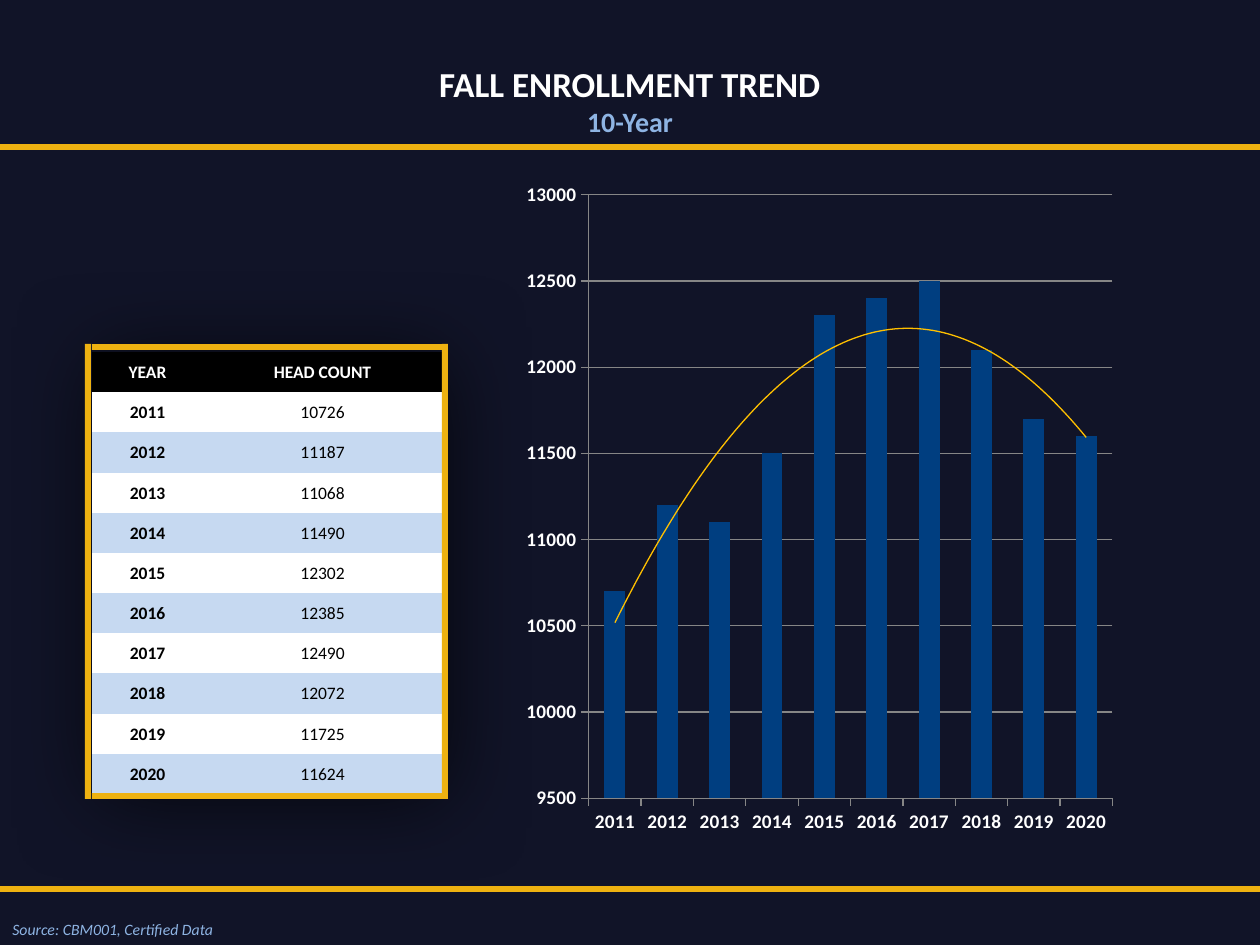
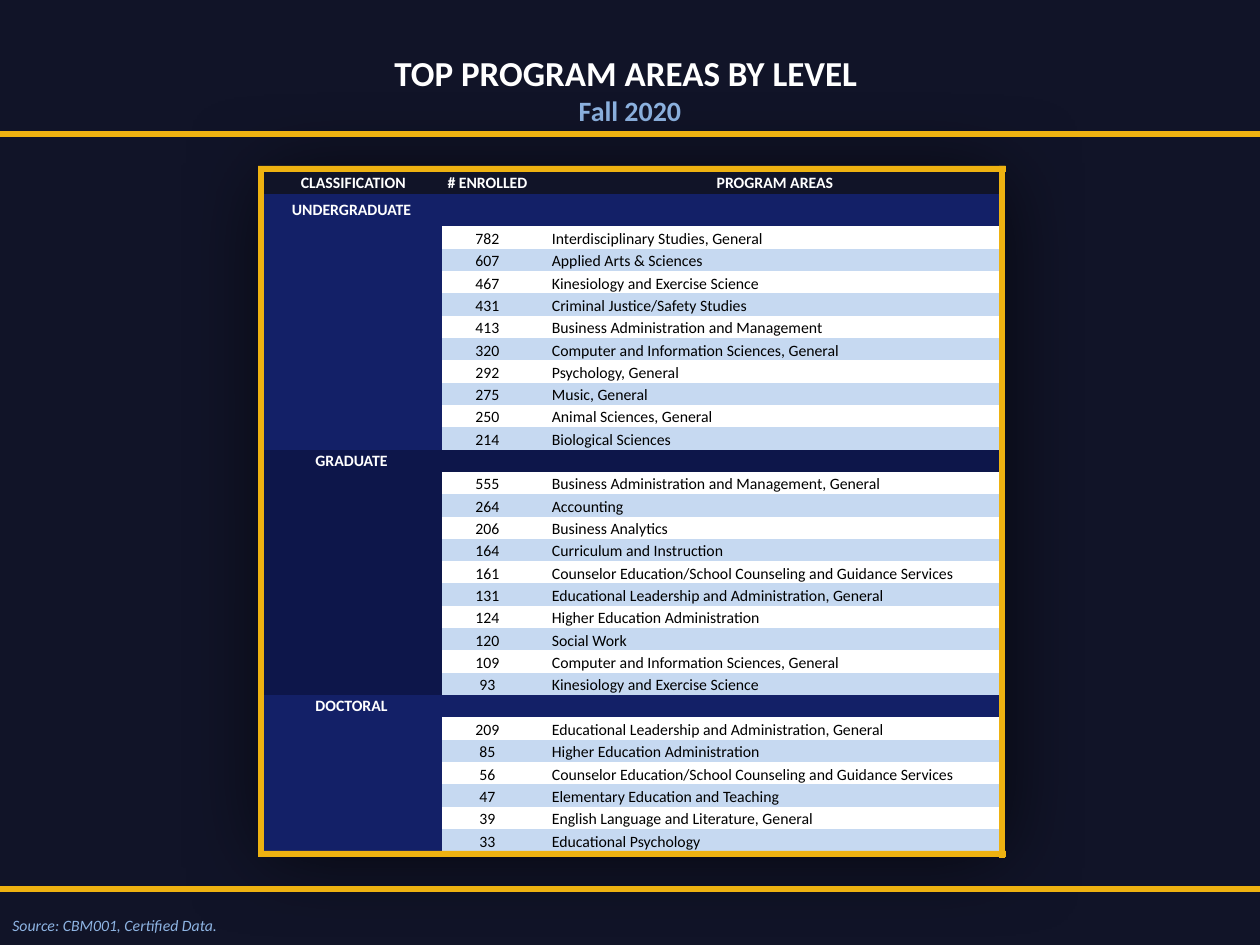
from pptx import Presentation
from pptx import util as u
from pptx.chart.data import CategoryChartData
from pptx.dml.color import RGBColor
from pptx.enum import chart as ch, shapes, text
from pptx.oxml import parse_xml

NAVY = RGBColor(0x11, 0x14, 0x28)
GOLD = RGBColor(0xEE, 0xB2, 0x11)
SKY = RGBColor(0x8E, 0xB4, 0xE3)
PALE = RGBColor(0xC6, 0xD9, 0xF1)
WHITE = RGBColor(0xFF, 0xFF, 0xFF)
BLACK = RGBColor(0, 0, 0)
ROYAL = RGBColor(0x13, 0x20, 0x67)
MIDNIGHT = RGBColor(0x0D, 0x16, 0x4A)
COLUMN_BLUE = RGBColor(0x00, 0x3E, 0x80)
AXIS_GRAY = RGBColor(0x86, 0x86, 0x86)
FONT = "Calibri"
NO_GRID_STYLE = "{2D5ABB26-0587-4C30-8999-92F81FD0307C}"
A_NS = 'xmlns:a="http://schemas.openxmlformats.org/drawingml/2006/main"'
C_NS = 'xmlns:c="http://schemas.openxmlformats.org/drawingml/2006/chart"'
CENTER, LEFT = text.PP_ALIGN.CENTER, text.PP_ALIGN.LEFT
MIDDLE, BOTTOM = text.MSO_ANCHOR.MIDDLE, text.MSO_ANCHOR.BOTTOM
BAR = 6


def px(n):
    return u.Emu(round(n * 914400 / 126))


def set_font(font, size, color, bold=False, italic=False):
    font.color.rgb = color
    look = {"name": FONT, "size": u.Pt(size), "bold": bold, "italic": italic}
    for key, value in look.items():
        setattr(font, key, value)


head_counts = {
    "2011": 10726, "2012": 11187, "2013": 11068, "2014": 11490, "2015": 12302,
    "2016": 12385, "2017": 12490, "2018": 12072, "2019": 11725, "2020": 11624,
}
levels = [
    ("UNDERGRADUATE", ROYAL, [
        (782, "Interdisciplinary Studies, General"),
        (607, "Applied Arts & Sciences"),
        (467, "Kinesiology and Exercise Science"),
        (431, "Criminal Justice/Safety Studies"),
        (413, "Business Administration and Management"),
        (320, "Computer and Information Sciences, General"),
        (292, "Psychology, General"),
        (275, "Music, General"),
        (250, "Animal Sciences, General"),
        (214, "Biological Sciences"),
    ]),
    ("GRADUATE", MIDNIGHT, [
        (555, "Business Administration and Management, General"),
        (264, "Accounting"),
        (206, "Business Analytics"),
        (164, "Curriculum and Instruction"),
        (161, "Counselor Education/School Counseling and Guidance Services"),
        (131, "Educational Leadership and Administration, General"),
        (124, "Higher Education Administration"),
        (120, "Social Work"),
        (109, "Computer and Information Sciences, General"),
        (93, "Kinesiology and Exercise Science"),
    ]),
    ("DOCTORAL", ROYAL, [
        (209, "Educational Leadership and Administration, General"),
        (85, "Higher Education Administration"),
        (56, "Counselor Education/School Counseling and Guidance Services"),
        (47, "Elementary Education and Teaching"),
        (39, "English Language and Literature, General"),
        (33, "Educational Psychology"),
    ]),
]

year_rows = [[(words, BLACK, WHITE, True, CENTER, MIDDLE, 5) for words in ("YEAR", "HEAD COUNT")]]
for i, (year, count) in enumerate(head_counts.items()):
    band = (WHITE, PALE)[i % 2]
    year_rows.append([(year, band, BLACK, True, CENTER, MIDDLE, 1),
                      (str(count), band, BLACK, False, CENTER, MIDDLE, 1)])

program_rows = [[(words, NAVY, WHITE, True, CENTER, MIDDLE, 0)
                 for words in (" CLASSIFICATION", "# ENROLLED", "", "PROGRAM AREAS")]]
for level, shade, programs in levels:
    program_rows.append([(words, shade, WHITE, True, CENTER, MIDDLE, 0)
                         for words in (level, "", "", "")])
    for i, (enrolled, program) in enumerate(programs):
        band = (WHITE, PALE)[i % 2]
        program_rows.append([("", shade, WHITE, True, CENTER, MIDDLE, 0),
                             (str(enrolled), band, BLACK, False, CENTER, BOTTOM, 1),
                             ("", band, BLACK, False, LEFT, BOTTOM, 1),
                             (program, band, BLACK, False, LEFT, BOTTOM, 1)])

pages = [
    {"title": "FALL ENROLLMENT TREND\n10-Year", "title_top": 56,
     "source": "Source: CBM001, Certified Data", "source_top": 914, "rule_top": 144,
     "rows": year_rows, "size": 10, "at": (92, 352), "widths": (111, 239),
     "heights": [442 / 11] * 11,
     "frame": [(92, 344, 351, BAR), (92, 793, 351, BAR),
               (85, 344, BAR, 455), (442, 344, BAR, 455)]},
    {"title": "TOP PROGRAM AREAS BY LEVEL \vFall 2020", "title_top": 45,
     "source": "Source: CBM001, Certified Data.", "source_top": 910, "rule_top": 131,
     "rows": program_rows, "size": 9, "at": (261, 172), "widths": (181, 91, 18, 448),
     "heights": [648 / 29, 32] + [648 / 29] * 28,
     "frame": [(258, 166, 748, BAR), (258, 851, 748, BAR),
               (258, 169, BAR, 686), (999, 166, BAR, 692)]},
]

prs = Presentation()
prs.slide_width, prs.slide_height = px(1260), px(945)

for page in pages:
    slide = prs.slides.add_slide(prs.slide_layouts[6])
    slide.background.fill.solid()
    slide.background.fill.fore_color.rgb = NAVY

    heading = slide.shapes.add_textbox(0, px(page["title_top"]), px(1260), px(127)).text_frame
    heading.word_wrap = True
    heading.text = page["title"]
    for line in heading.paragraphs:
        line.alignment = CENTER
    title, subtitle = [run for line in heading.paragraphs for run in line.runs]
    set_font(title.font, 20, WHITE, bold=True)
    set_font(subtitle.font, 16, SKY, bold=True)

    rows = page["rows"]
    left, top = page["at"]
    grid = slide.shapes.add_table(len(rows), len(rows[0]), px(left), px(top),
                                  px(sum(page["widths"])), px(sum(page["heights"]))).table
    grid.first_row = grid.horz_banding = False
    style = grid._tbl.tblPr[0]
    style.text = NO_GRID_STYLE
    style.addprevious(parse_xml(
        f'<a:effectLst {A_NS}><a:outerShdw blurRad="{px(88)}" dist="{px(6)}" dir="2700000" '
        'algn="tl" rotWithShape="0"><a:srgbClr val="000000"><a:alpha val="70000"/>'
        '</a:srgbClr></a:outerShdw></a:effectLst>'))
    for column, width in zip(grid.columns, page["widths"]):
        column.width = px(width)
    for row, height, contents in zip(grid.rows, page["heights"], rows):
        row.height = px(height)
        for cell, (words, fill, color, bold, align, anchor, inset) in zip(row.cells, contents):
            cell.fill.solid()
            cell.fill.fore_color.rgb = fill
            cell.vertical_anchor = anchor
            cell.margin_left = cell.margin_right = cell.margin_top = px(inset)
            cell.margin_bottom = px(inset if inset > 1 else 0)
            line = cell.text_frame.paragraphs[0]
            line.alignment = align
            if words:
                run = line.add_run()
                run.text = words
                set_font(run.font, page["size"], color, bold)
            else:
                line._p.append(parse_xml(f'<a:endParaRPr {A_NS} sz="{page["size"] * 100}"/>'))

    if rows is year_rows:
        data = CategoryChartData()
        data.categories = list(head_counts)
        data.add_series("Series 1", [round(count, -2) for count in head_counts.values()])
        trend = slide.shapes.add_chart(ch.XL_CHART_TYPE.COLUMN_CLUSTERED, px(508), px(183),
                                       px(769), px(692), data).chart
        trend.has_legend = trend.has_title = False
        set_font(trend.font, 18, BLACK)
        plot = trend.plots[0]
        plot.gap_width = 150
        plot.vary_by_categories = False
        counts = plot.series[0]
        counts.format.fill.solid()
        counts.format.fill.fore_color.rgb = COLUMN_BLUE
        for axis in (trend.category_axis, trend.value_axis):
            set_font(axis.tick_labels.font, 11, WHITE, bold=True)
            axis.major_tick_mark = ch.XL_TICK_MARK.OUTSIDE
            axis.format.line.color.rgb = AXIS_GRAY
            axis.format.line.width = u.Pt(0.75)
        scale = {"minimum_scale": 9500, "maximum_scale": 13000, "major_unit": 500,
                 "has_major_gridlines": True}
        for key, value in scale.items():
            setattr(trend.value_axis, key, value)
        gridlines = trend.value_axis.major_gridlines.format.line
        gridlines.color.rgb = AXIS_GRAY
        gridlines.width = u.Pt(0.75)
        counts._element.find("{*}cat").addprevious(parse_xml(
            f'<c:trendline {C_NS} {A_NS}><c:spPr><a:ln w="9525"><a:solidFill>'
            '<a:srgbClr val="FFC000"/></a:solidFill></a:ln></c:spPr>'
            '<c:trendlineType val="poly"/><c:order val="2"/>'
            '<c:dispRSqr val="0"/><c:dispEq val="0"/></c:trendline>'))
        area = trend._chartSpace.chart.plotArea
        for spare in area.findall("{*}layout"):
            area.remove(spare)
        area.insert(0, parse_xml(
            f'<c:layout {C_NS}><c:manualLayout><c:layoutTarget val="inner"/>'
            '<c:xMode val="edge"/><c:yMode val="edge"/><c:x val="0.105"/><c:y val="0.015"/>'
            '<c:w val="0.681"/><c:h val="0.874"/></c:manualLayout></c:layout>'))

    source = slide.shapes.add_textbox(0, px(page["source_top"]), px(240), px(32)).text_frame
    source.text = page["source"]
    set_font(source.paragraphs[0].runs[0].font, 9, SKY, italic=True)

    rules = [(0, 886, 1260, BAR), (0, page["rule_top"], 1260, BAR)]
    for box in rules + page["frame"]:
        bar = slide.shapes.add_shape(shapes.MSO_SHAPE.RECTANGLE, *map(px, box))
        bar.shadow.inherit = False
        bar.fill.solid()
        bar.fill.fore_color.rgb = GOLD
        bar.line.fill.background()

prs.save("out.pptx")
